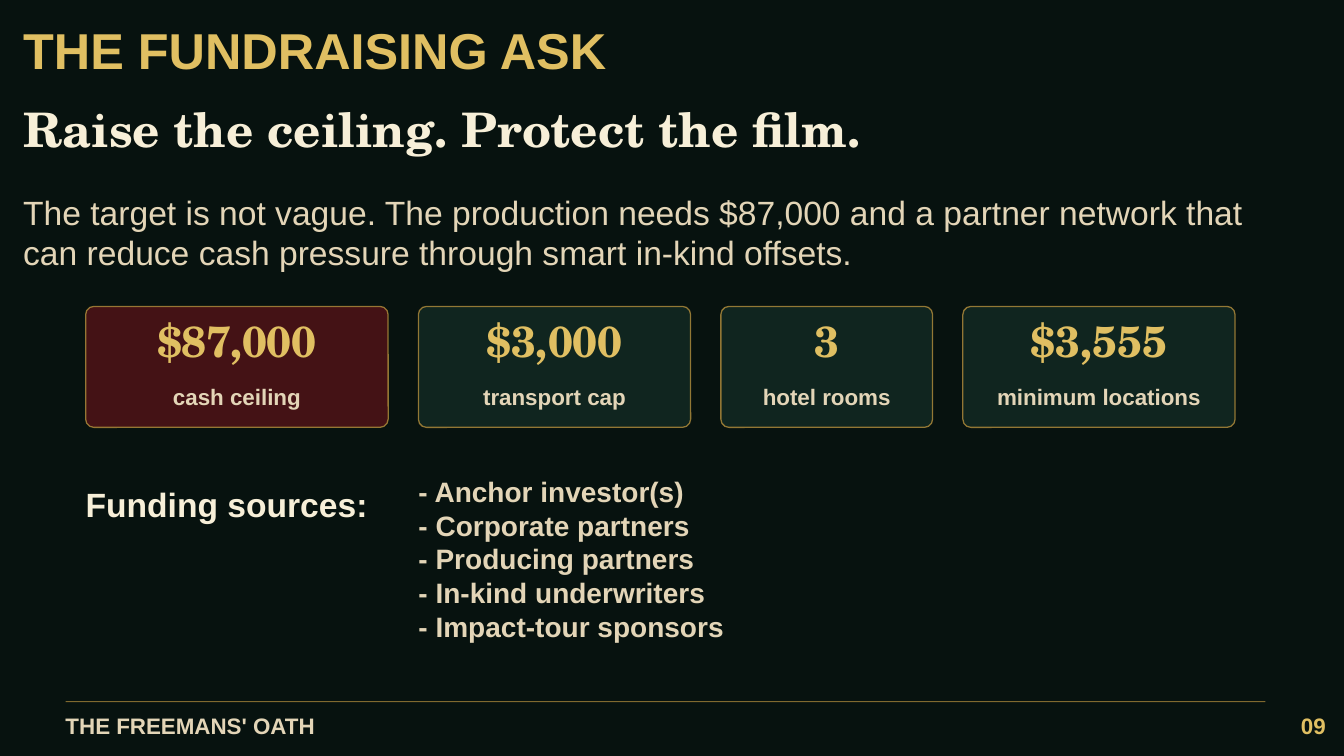
"""Build the fundraising ask slide."""

from dataclasses import dataclass

import lxml.etree
import pptx
import pptx.dml.color
import pptx.enum.shapes
import pptx.enum.text
import pptx.oxml.ns
import pptx.util

Inches = pptx.util.Inches
Align = pptx.enum.text.PP_ALIGN
Anchor = pptx.enum.text.MSO_ANCHOR
AutoSize = pptx.enum.text.MSO_AUTO_SIZE

COLORS = {
    "night": "07120F",
    "gold": "E0BF62",
    "cream": "F7EFD8",
    "sand": "E3D5B7",
    "bronze": "A9873A",
    "maroon": "441215",
    "pine": "10251F",
}
SANS, SERIF = "Arial", "TeX Gyre Schola"
FRAME_FORMAT = {
    "margin_left": 0,
    "margin_top": 0,
    "margin_right": 0,
    "margin_bottom": 0,
    "word_wrap": True,
}
CARD_LEFT, CARD_TOP, CARD_HEIGHT, CARD_GAP = 0.85, 3.04, 1.2, 0.3
CARD_PADDING = 0.12


@dataclass(frozen=True)
class Copy:
    lines: tuple[str, ...]
    left: float
    top: float
    width: float
    height: float
    size: float
    color: str
    font: str = SANS
    bold: bool = True
    align: Align = Align.LEFT
    anchor: Anchor = Anchor.MIDDLE
    fit: AutoSize = AutoSize.NONE


@dataclass(frozen=True)
class Card:
    amount: str
    label: str
    width: float
    fill: str = "pine"


GROW = AutoSize.SHAPE_TO_FIT_TEXT
COPIES = (
    Copy(("THE FUNDRAISING ASK",), 0.23, 0.31, 12.72, 0.35, 36, "gold"),
    Copy(("Raise the ceiling. Protect the film.",), 0.23, 0.99, 12.72, 0.57, 34,
         "cream", font=SERIF, fit=GROW),
    Copy(("The target is not vague. The production needs $87,000 and a partner network "
          "that can reduce cash pressure through smart in-kind offsets.",),
         0.23, 1.9, 12.72, 0.81, 24, "sand", bold=False, anchor=Anchor.TOP, fit=GROW),
    Copy(("Funding sources:",), 0.85, 4.8, 3.85, 0.41, 24, "cream",
         anchor=Anchor.TOP, fit=GROW),
    Copy(("- Anchor investor(s)", "- Corporate partners", "- Producing partners",
          "- In-kind underwriters", "- Impact-tour sponsors"),
         4.15, 4.71, 4.05, 1.68, 20, "sand", anchor=Anchor.TOP, fit=GROW),
    Copy(("THE FREEMANS' OATH",), 0.65, 7.06, 4.2, 0.28, 16, "sand"),
    Copy(("09",), 12.35, 7.06, 0.8, 0.28, 16, "gold", align=Align.RIGHT),
)
CARDS = (
    Card("$87,000", "cash ceiling", 3, "maroon"),
    Card("$3,000", "transport cap", 2.7),
    Card("3", "hotel rooms", 2.1),
    Card("$3,555", "minimum locations", 2.7),
)


def rgb(name: str) -> pptx.dml.color.RGBColor:
    return pptx.dml.color.RGBColor.from_string(COLORS[name])


def apply_format(target: object, values: dict[str, object]) -> None:
    for attribute, value in values.items():
        setattr(target, attribute, value)


def draw_copy(slide: pptx.slide.Slide, copy: Copy) -> None:
    box = slide.shapes.add_textbox(
        Inches(copy.left), Inches(copy.top), Inches(copy.width), Inches(copy.height))
    frame = box.text_frame
    apply_format(frame, FRAME_FORMAT | {
        "vertical_anchor": copy.anchor, "auto_size": copy.fit})
    frame.text = "\n".join(copy.lines)
    for paragraph in frame.paragraphs:
        paragraph.alignment = copy.align
        font = paragraph.runs[0].font
        apply_format(font, {
            "name": copy.font, "size": pptx.util.Pt(copy.size), "bold": copy.bold})
        font.color.rgb = rgb(copy.color)


def style_line(line: pptx.dml.line.LineFormat, width: float,
               properties: lxml.etree.ElementBase, opacity: int) -> None:
    line.color.rgb = rgb("bronze")
    line.width = pptx.util.Pt(width)
    qn = pptx.oxml.ns.qn
    stroke = properties.find(f"{qn('a:ln')}/{qn('a:solidFill')}/{qn('a:srgbClr')}")
    lxml.etree.SubElement(stroke, qn("a:alpha"), val=str(opacity * 1000))


def draw_card(slide: pptx.slide.Slide, card: Card, left: float) -> None:
    panel = slide.shapes.add_shape(
        pptx.enum.shapes.MSO_SHAPE.ROUNDED_RECTANGLE,
        Inches(left), Inches(CARD_TOP), Inches(card.width), Inches(CARD_HEIGHT))
    panel.adjustments[0] = 0.067
    panel.shadow.inherit = False
    panel.fill.solid()
    panel.fill.fore_color.rgb = rgb(card.fill)
    style_line(panel.line, 0.9, panel._element.spPr, 85)
    draw_copy(slide, Copy(
        (card.amount,), left, CARD_TOP + 0.12, card.width, 0.42, 31, "gold",
        font=SERIF, align=Align.CENTER))
    draw_copy(slide, Copy(
        (card.label,), left + CARD_PADDING, CARD_TOP + 0.68,
        card.width - 2 * CARD_PADDING, 0.42, 16, "sand", align=Align.CENTER, fit=GROW))


def draw_footer_rule(slide: pptx.slide.Slide) -> None:
    rule = slide.shapes.add_connector(
        pptx.enum.shapes.MSO_CONNECTOR.STRAIGHT,
        Inches(0.65), Inches(6.96), Inches(12.55), Inches(6.96))
    properties = rule._element.spPr
    style_line(rule.line, 0.75, properties, 75)
    lxml.etree.SubElement(properties, pptx.oxml.ns.qn("a:effectLst"))


def main() -> None:
    deck = pptx.Presentation()
    apply_format(deck, {"slide_width": Inches(13.33), "slide_height": Inches(7.5)})
    slide = deck.slides.add_slide(deck.slide_layouts[6])
    slide.background.fill.solid()
    slide.background.fill.fore_color.rgb = rgb("night")
    for copy in COPIES[:3]:
        draw_copy(slide, copy)
    left = CARD_LEFT
    for card in CARDS:
        draw_card(slide, card, left)
        left += card.width + CARD_GAP
    for copy in COPIES[3:5]:
        draw_copy(slide, copy)
    draw_footer_rule(slide)
    for copy in COPIES[5:]:
        draw_copy(slide, copy)
    deck.save("out.pptx")


if __name__ == "__main__":
    main()
